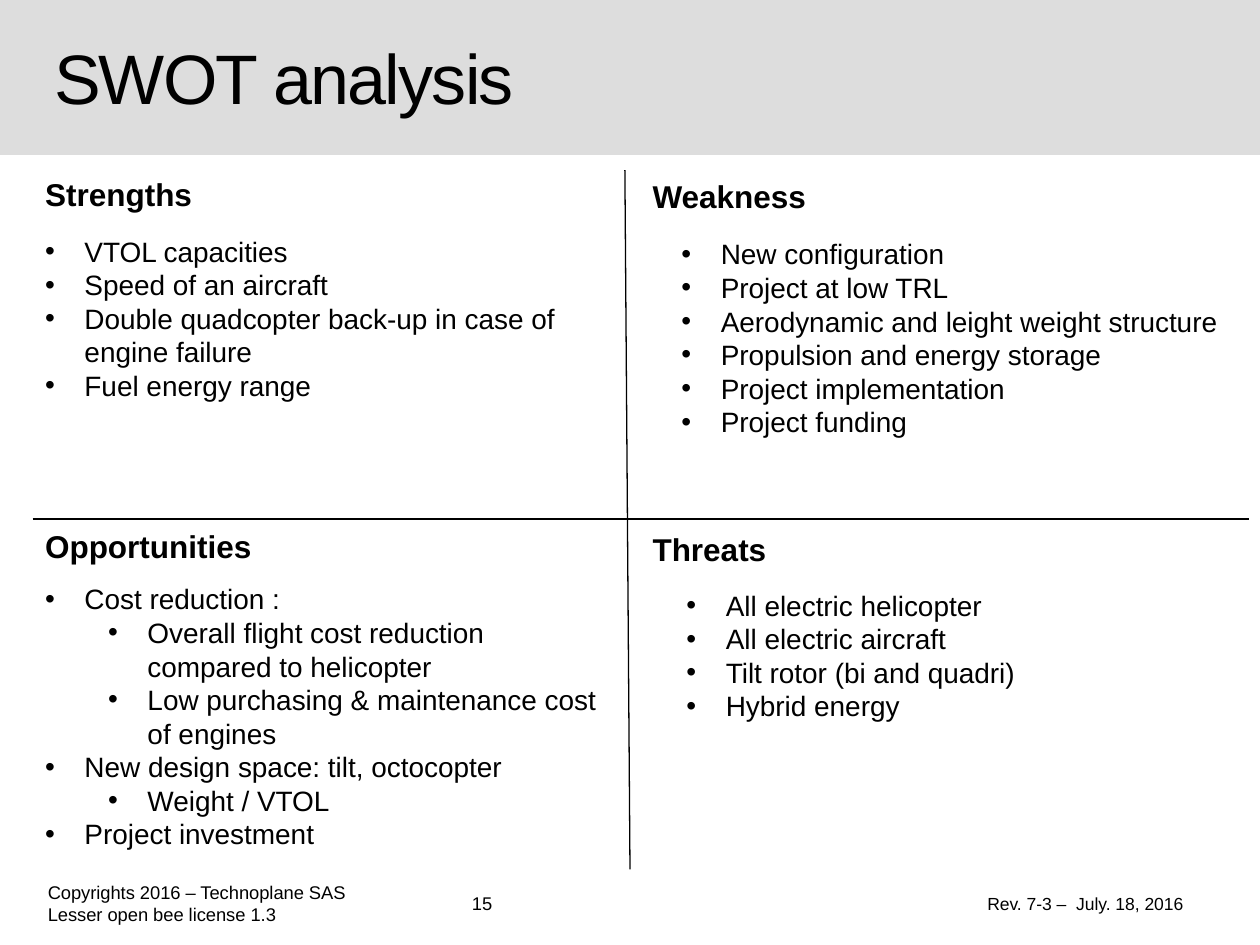
from dataclasses import dataclass

from lxml.etree import SubElement
from pptx import Presentation
from pptx.dml.color import RGBColor
from pptx.enum.shapes import MSO_CONNECTOR, MSO_SHAPE
from pptx.enum.text import MSO_ANCHOR, MSO_AUTO_SIZE, PP_ALIGN
from pptx.oxml.ns import qn
from pptx.slide import Slide
from pptx.util import Pt

HUES = {"band": "DDDDDD", "ink": "000000"}
INDENT, STEP = 22.5, 36


@dataclass
class Label:
    box: tuple
    lines: list
    size: float
    bold: bool = False
    wrap: bool = True
    grow: bool = True
    align: PP_ALIGN = PP_ALIGN.LEFT
    kern: int = 0


@dataclass
class Quad:
    head: str
    spot: tuple
    box: tuple
    items: list
    wrap: bool


QUADS = [
    Quad("Strengths", (18.7, 96.5, 99.4, 28.8), (18.7, 130.3, 338.4, 123.8),
         [(0, "VTOL capacities"), (0, "Speed of an aircraft"),
          (0, "Double quadcopter back-up in case of engine failure"),
          (0, "Fuel energy range")], True),
    Quad("Opportunities", (18.7, 297.4, 133.9, 28.8), (18.7, 329, 331.2, 162.7),
         [(0, "Cost reduction :"),
          (1, "Overall flight cost reduction compared to helicopter"),
          (1, "Low purchasing & maintenance cost of engines"),
          (0, "New design space: tilt, octocopter"),
          (1, "Weight / VTOL"), (0, "Project investment")], True),
    Quad("Threats", (365.8, 299.5, 79.9, 28.8), (385.2, 332.6, 204.5, 85),
         [(0, "All electric helicopter"), (0, "All electric aircraft"),
          (0, "Tilt rotor (bi and quadri)"), (0, "Hybrid energy")], False),
    Quad("Weakness", (365.8, 97.9, 103, 28.8), (382.3, 131.8, 324.7, 123.8),
         [(0, "New configuration"), (0, "Project at low TRL"),
          (0, "Aerodynamic and leight weight structure"),
          (0, "Propulsion and energy storage"),
          (0, "Project implementation"), (0, "Project funding")], False),
]

LABELS = [
    Label((360, 503.3, 323.3, 25.9), ["Rev. 7-3 –  July. 18, 2016"], 10,
          grow=False, align=PP_ALIGN.RIGHT),
    Label((20.2, 503.3, 193, 25.9),
          ["Copyrights 2016 – Technoplane SAS", "Lesser open bee license 1.3"],
          10.5, grow=False),
    Label((247, 506.2, 56.9, 20.9), ["15"], 10.5, align=PP_ALIGN.CENTER),
    Label((23.8, 5, 648, 77.8), ["SWOT analysis"], 40, grow=False, kern=-100),
]

RULES = [(357.1, 97.2, 360, 496.8), (18.7, 296.6, 713.5, 296.6)]


def hue(name: str) -> RGBColor:
    """Return the named colour."""
    return RGBColor.from_string(HUES[name])


def draw_label(slide: Slide, label: Label) -> None:
    """Draw a text box; a line given as (level, text) gets a bullet."""
    frame = slide.shapes.add_textbox(*map(Pt, label.box)).text_frame
    form = {
        "word_wrap": label.wrap,
        "auto_size": MSO_AUTO_SIZE.SHAPE_TO_FIT_TEXT if label.grow else MSO_AUTO_SIZE.NONE,
        "vertical_anchor": MSO_ANCHOR.TOP if label.grow else MSO_ANCHOR.MIDDLE,
    }
    for key, value in form.items():
        setattr(frame, key, value)
    face = {"name": "Arial", "size": Pt(label.size), "bold": label.bold}
    for at, line in enumerate(label.lines):
        para = frame.add_paragraph() if at else frame.paragraphs[0]
        para.alignment = label.align
        if isinstance(line, tuple):
            level, line = line
            para.level = level
            props = para._p.get_or_add_pPr()
            props.set("marL", str(Pt(INDENT + STEP * level)))
            props.set("indent", str(-Pt(INDENT)))
            SubElement(props, qn("a:buFont")).set("typeface", "Arial")
            SubElement(props, qn("a:buChar")).set("char", "•")
        run = para.add_run()
        run.text = line
        for key, value in face.items():
            setattr(run.font, key, value)
        run.font.color.rgb = hue("ink")
        if label.kern:
            run._r.get_or_add_rPr().set("spc", str(label.kern))


def draw_quad(slide: Slide, quad: Quad) -> None:
    """Draw the heading and the list of one quadrant."""
    draw_label(slide, Label(quad.spot, [quad.head], 18, bold=True, wrap=False))
    draw_label(slide, Label(quad.box, quad.items, 16, wrap=quad.wrap))


def draw_rule(slide: Slide, ends: tuple) -> None:
    """Draw a thin dividing line."""
    rule = slide.shapes.add_connector(MSO_CONNECTOR.STRAIGHT, *map(Pt, ends))
    rule.line.width = Pt(0.75)
    rule.line.color.rgb = hue("ink")
    SubElement(rule._element.spPr, qn("a:effectLst"))


def draw_band(slide: Slide) -> None:
    """Draw the band behind the title."""
    band = slide.shapes.add_shape(MSO_SHAPE.RECTANGLE, 0, 0, Pt(720), Pt(88.6))
    band.shadow.inherit = False
    band.fill.solid()
    band.fill.fore_color.rgb = hue("band")
    band.line.fill.background()


def main() -> None:
    """Build the slide and save it."""
    deck = Presentation()
    deck.slide_width, deck.slide_height = Pt(720), Pt(540)
    slide = deck.slides.add_slide(deck.slide_layouts[6])
    draw_band(slide)
    for label in LABELS:
        draw_label(slide, label)
    for ends in RULES:
        draw_rule(slide, ends)
    for quad in QUADS:
        draw_quad(slide, quad)
    deck.save("out.pptx")


if __name__ == "__main__":
    main()
